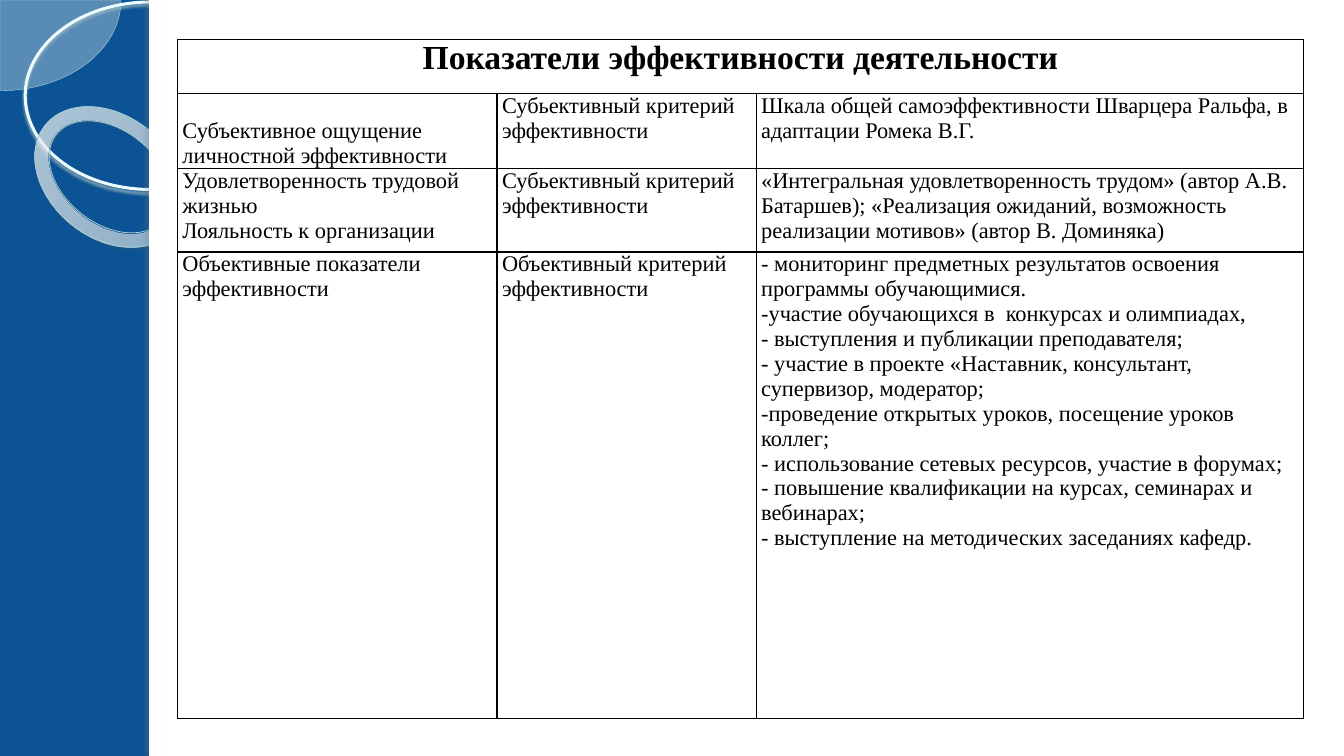
from lxml import etree
from pptx import Presentation
from pptx import util as u
from pptx.dml.color import RGBColor
from pptx.enum import shapes, text
from pptx.oxml import ns

NAVY = RGBColor(0x0B, 0x53, 0x94)
WHITE = RGBColor(0xFF, 0xFF, 0xFF)
BLACK = RGBColor(0x00, 0x00, 0x00)
ICE = RGBColor(0xF8, 0xFE, 0xFF)
PALE_EDGE = RGBColor(0xAF, 0xDB, 0xE2)
HOOP_EDGE = RGBColor(0xED, 0xFC, 0xFF)
RING_EDGE = RGBColor(0xA1, 0xCF, 0xD6)
HOOP_SHADE = RGBColor(0x9C, 0xB9, 0xBE)
RING_SHADE = RGBColor(0x4B, 0x5E, 0x61)
PANEL_SHADE = RGBColor(0x6C, 0x7A, 0x7C)
RING_STOPS = [
    (0, RGBColor(0xF9, 0xFE, 0xFF), 70),
    (70, RGBColor(0xFD, 0xFF, 0xFF), 55),
    (100, RGBColor(0x9E, 0xF2, 0xFF), 60),
]
RING_FOCUS = {"l": -408, "t": -50, "r": 508, "b": 150}

FONT = "Times New Roman"
WIDTH, HEIGHT = 13.33, 7.5
BAND = 1.48
KIND = shapes.MSO_SHAPE
DECOR = [
    dict(kind=KIND.PIE, at=(-1.19, -0.89, 2.39, 1.79), adjust=(0, 54.02),
         fill=ICE, alpha=33, line=(PALE_EDGE, 0.25)),
    dict(kind=KIND.OVAL, at=(0.25, 0.02, 2.48, 1.86),
         line=(HOOP_EDGE, 2.15), shadow=(HOOP_SHADE, 85, 2, 2, 90)),
    dict(kind=KIND.DONUT, at=(0.27, 1.15, 1.64, 1.21), adjust=(0.118,), turn=38.6,
         stops=RING_STOPS, line=(RING_EDGE, 0.58), shadow=(RING_SHADE, 35, 1, 1.2, 75)),
    dict(kind=KIND.RECTANGLE, at=(BAND, 0, WIDTH - BAND, HEIGHT), fill=WHITE),
    dict(kind=KIND.RECTANGLE, at=(BAND, 0, 0.11, HEIGHT), fill=WHITE,
         shadow=(PANEL_SHADE, 25, 3, 3, 180)),
]

TITLE = "Показатели эффективности деятельности"
ROWS = [
    (["Субъективное ощущение личностной эффективности"],
     ["Субьективный критерий эффективности"],
     ["Шкала общей самоэффективности Шварцера Ральфа, в адаптации Ромека В.Г."]),
    (["Удовлетворенность трудовой жизнью", "Лояльность к организации"],
     ["Субьективный критерий эффективности"],
     ["«Интегральная удовлетворенность трудом» (автор А.В. Батаршев); "
      "«Реализация ожиданий, возможность реализации мотивов» (автор В. Доминяка)"]),
    (["Объективные показатели эффективности"],
     ["Объективный критерий эффективности"],
     ["- мониторинг предметных результатов освоения программы обучающимися.",
      "-участие обучающихся в  конкурсах и олимпиадах,",
      "- выступления и публикации преподавателя;",
      "- участие в проекте «Наставник, консультант, супервизор, модератор;",
      "-проведение открытых уроков, посещение уроков коллег;",
      "- использование сетевых ресурсов, участие в форумах;",
      "- повышение квалификации на курсах, семинарах и вебинарах;",
      "- выступление на методических заседаниях кафедр."]),
]
TABLE_LEFT, TABLE_TOP = 1.76, 0.39
COLUMN_WIDTHS = [3.17, 2.57, 5.43]
ROW_HEIGHTS = [0.54, 0.74, 0.83, 4.63]


def add(parent, tag, **attributes):
    values = {name: str(value) for name, value in attributes.items()}
    return etree.SubElement(parent, ns.qn(tag), values)


def add_color(parent, color, alpha):
    add(add(parent, "a:srgbClr", val=color), "a:alpha", val=alpha * 1000)


def add_shadow(shape, color, alpha, blur, distance, angle):
    effects = shape.element.spPr.find(ns.qn("a:effectLst"))
    shade = add(effects, "a:outerShdw", blurRad=u.Pt(blur), dist=u.Pt(distance),
                dir=angle * 60000, algn="ctr", rotWithShape=0)
    add_color(shade, color, alpha)


def fill_radial(shape, stops):
    shape.fill.gradient()
    gradient = shape.element.spPr.find(ns.qn("a:gradFill"))
    for child in list(gradient):
        gradient.remove(child)
    stop_list = add(gradient, "a:gsLst")
    for position, color, alpha in stops:
        add_color(add(stop_list, "a:gs", pos=position * 1000), color, alpha)
    focus = add(gradient, "a:path", path="circle")
    add(focus, "a:fillToRect", **{side: share * 1000 for side, share in RING_FOCUS.items()})


def draw_decor(page, kind, at, adjust=(), turn=0, fill=None, alpha=100,
               stops=None, line=None, shadow=None):
    shape = page.shapes.add_shape(kind, *map(u.Inches, at))
    shape.rotation = turn
    for index, value in enumerate(adjust):
        shape.adjustments[index] = value
    if stops:
        fill_radial(shape, stops)
    elif fill is not None:
        shape.fill.solid()
        shape.fill.fore_color.rgb = fill
        color = shape.element.spPr.find(".//" + ns.qn("a:srgbClr"))
        add(color, "a:alpha", val=alpha * 1000)
    else:
        shape.fill.background()
    if line:
        shape.line.color.rgb, shape.line.width = line[0], u.Pt(line[1])
    else:
        shape.line.fill.background()
    shape.shadow.inherit = False
    if shadow:
        add_shadow(shape, *shadow)


def style_cell(cell):
    cell.margin_left = cell.margin_right = u.Inches(0.05)
    cell.margin_top = cell.margin_bottom = 0
    properties = cell._tc.get_or_add_tcPr()
    for side in ("a:lnL", "a:lnR", "a:lnT", "a:lnB"):
        border = add(properties, side, w=u.Pt(1))
        add(add(border, "a:solidFill"), "a:srgbClr", val=BLACK)
    cell.fill.background()


def write(cell, lines, size=16, bold=False, align=text.PP_ALIGN.LEFT):
    cell.text = "\n".join(lines)
    for para in cell.text_frame.paragraphs:
        para.alignment = align
        para.font.name, para.font.size = FONT, u.Pt(size)
        para.font.bold = bold
        para.font.color.rgb = BLACK


def draw_table(page):
    frame = page.shapes.add_table(
        len(ROW_HEIGHTS), len(COLUMN_WIDTHS), u.Inches(TABLE_LEFT), u.Inches(TABLE_TOP),
        u.Inches(sum(COLUMN_WIDTHS)), u.Inches(sum(ROW_HEIGHTS)))
    table = frame.table
    table.first_row = table.horz_banding = False
    for column, width in zip(table.columns, COLUMN_WIDTHS):
        column.width = u.Inches(width)
    for row, height in zip(table.rows, ROW_HEIGHTS):
        row.height = u.Inches(height)
    for cell in table.iter_cells():
        style_cell(cell)
    heading = table.cell(0, 0)
    heading.merge(table.cell(0, len(COLUMN_WIDTHS) - 1))
    write(heading, [TITLE], 24, True, text.PP_ALIGN.CENTER)
    for row, cells in enumerate(ROWS, 1):
        for column, lines in enumerate(cells):
            write(table.cell(row, column), lines)
    table.cell(1, 0).vertical_anchor = text.MSO_ANCHOR.BOTTOM


def main():
    deck = Presentation()
    deck.slide_width, deck.slide_height = u.Inches(WIDTH), u.Inches(HEIGHT)
    page = deck.slides.add_slide(deck.slide_layouts[6])
    page.background.fill.solid()
    page.background.fill.fore_color.rgb = NAVY
    for decor in DECOR:
        draw_decor(page, **decor)
    draw_table(page)
    deck.save("out.pptx")


if __name__ == "__main__":
    main()
